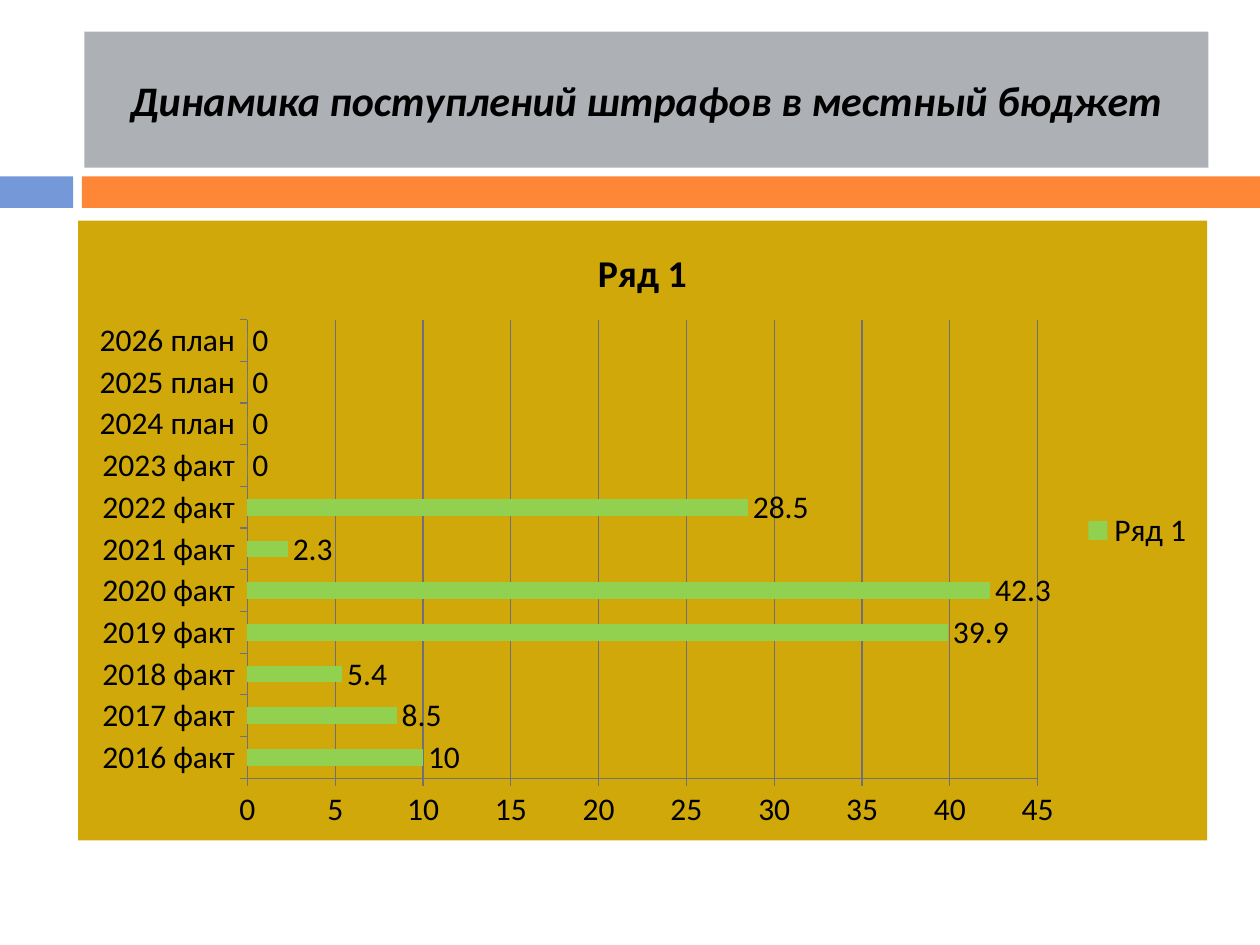
from dataclasses import dataclass

from lxml import etree
from pptx import Presentation
from pptx.chart import data as cd
from pptx.dml.color import RGBColor
from pptx.enum import chart as ce, shapes, text
from pptx.oxml import ns
from pptx.util import Inches, Pt

BLUE = RGBColor(0x75, 0x98, 0xD9)
ORANGE = RGBColor(0xFE, 0x86, 0x37)
GRAY = RGBColor(0xAD, 0xB0, 0xB5)
GOLD = RGBColor(0xD0, 0xA8, 0x0A)
GREEN = RGBColor(0x92, 0xD0, 0x50)
LINE = RGBColor(0x70, 0x70, 0x78)
BLACK = RGBColor(0, 0, 0)

NAME = "Ряд 1"
FINES = [10, 8.5, 5.4, 39.9, 42.3, 2.3, 28.5, 0, 0, 0, 0]
YEARS = [f"{y} {'факт' if y < 2024 else 'план'}" for y in range(2016, 2027)]
FONT = {"name": "Calibri", "size": Pt(18), "bold": False}
HEAD = {"name": "Calibri", "size": Pt(24), "bold": True, "italic": True}
TITLE = {"name": "Calibri", "size": Pt(21.6), "bold": True}
PLOT = {"x": 0.15, "y": 0.16, "w": 0.7, "h": 0.74}


@dataclass
class Band:
    left: float
    width: float
    color: RGBColor


BANDS = [Band(0, 0.58, BLUE), Band(0.65, 9.35, ORANGE)]


def style(font, form: dict) -> None:
    for key, value in form.items():
        setattr(font, key, value)
    font.color.rgb = BLACK


def draw_band(slide, band: Band) -> None:
    bar = slide.shapes.add_shape(
        shapes.MSO_SHAPE.RECTANGLE,
        Inches(band.left), Inches(1.4), Inches(band.width), Inches(0.25))
    bar.shadow.inherit = False
    bar.fill.solid()
    bar.fill.fore_color.rgb = band.color
    bar.line.fill.background()


def draw_title(slide) -> None:
    title = slide.shapes.title
    title.left, title.top = Inches(0.67), Inches(0.25)
    title.width, title.height = Inches(8.92), Inches(1.08)
    title.fill.solid()
    title.fill.fore_color.rgb = GRAY
    frame = title.text_frame
    frame.text = "Динамика поступлений штрафов в местный бюджет"
    frame.vertical_anchor = text.MSO_ANCHOR.MIDDLE
    para = frame.paragraphs[0]
    para.alignment = text.PP_ALIGN.CENTER
    style(para.runs[0].font, HEAD)


def fill_chart(chart) -> None:
    """Paint the whole chart area gold, without a border."""
    root = chart.element
    props = etree.Element(ns.qn("c:spPr"))
    fill = etree.SubElement(props, ns.qn("a:solidFill"))
    etree.SubElement(fill, ns.qn("a:srgbClr"), val=str(GOLD))
    line = etree.SubElement(props, ns.qn("a:ln"))
    etree.SubElement(line, ns.qn("a:noFill"))
    root.find(ns.qn("c:chart")).addnext(props)


def place_plot(chart) -> None:
    """Fix the inner plot area as shares of the chart."""
    area = chart.element.find(".//" + ns.qn("c:plotArea"))
    for old in area.findall(ns.qn("c:layout")):
        area.remove(old)
    layout = etree.Element(ns.qn("c:layout"))
    manual = etree.SubElement(layout, ns.qn("c:manualLayout"))
    modes = {"layoutTarget": "inner", "xMode": "edge", "yMode": "edge"}
    for key, value in {**modes, **PLOT}.items():
        etree.SubElement(manual, ns.qn(f"c:{key}"), val=str(value))
    area.insert(0, layout)


def draw_chart(slide) -> None:
    data = cd.CategoryChartData()
    data.categories = YEARS
    data.add_series(NAME, FINES)
    chart = slide.shapes.add_chart(
        ce.XL_CHART_TYPE.BAR_CLUSTERED,
        Inches(0.62), Inches(1.75), Inches(8.96), Inches(4.92), data).chart
    style(chart.font, FONT)
    fill_chart(chart)
    place_plot(chart)

    chart.has_title = True
    chart.chart_title.include_in_layout = False
    frame = chart.chart_title.text_frame
    frame.text = NAME
    style(frame.paragraphs[0].runs[0].font, TITLE)
    chart.has_legend = True
    chart.legend.position = ce.XL_LEGEND_POSITION.RIGHT
    chart.legend.include_in_layout = False

    for axis in (chart.category_axis, chart.value_axis):
        axis.major_tick_mark = ce.XL_TICK_MARK.OUTSIDE
        axis.format.line.color.rgb = LINE
        style(axis.tick_labels.font, FONT)
    skip = etree.Element(ns.qn("c:tickLblSkip"), val="2")
    chart.element.find(".//" + ns.qn("c:noMultiLvlLbl")).addprevious(skip)
    scale = chart.value_axis
    scale.minimum_scale, scale.maximum_scale, scale.major_unit = 0, 45, 5
    scale.has_major_gridlines = True
    scale.major_gridlines.format.line.color.rgb = LINE

    plot = chart.plots[0]
    plot.vary_by_categories = False
    plot.gap_width = 150
    fill = plot.series[0].format.fill
    fill.solid()
    fill.fore_color.rgb = GREEN
    plot.has_data_labels = True
    labels = plot.data_labels
    labels.show_value = True
    labels.position = ce.XL_LABEL_POSITION.OUTSIDE_END
    style(labels.font, FONT)


def main() -> None:
    deck = Presentation()
    deck.slide_width, deck.slide_height = Inches(10), Inches(7.5)
    slide = deck.slides.add_slide(deck.slide_layouts[5])
    for band in BANDS:
        draw_band(slide, band)
    draw_title(slide)
    draw_chart(slide)
    deck.save("out.pptx")


if __name__ == "__main__":
    main()
